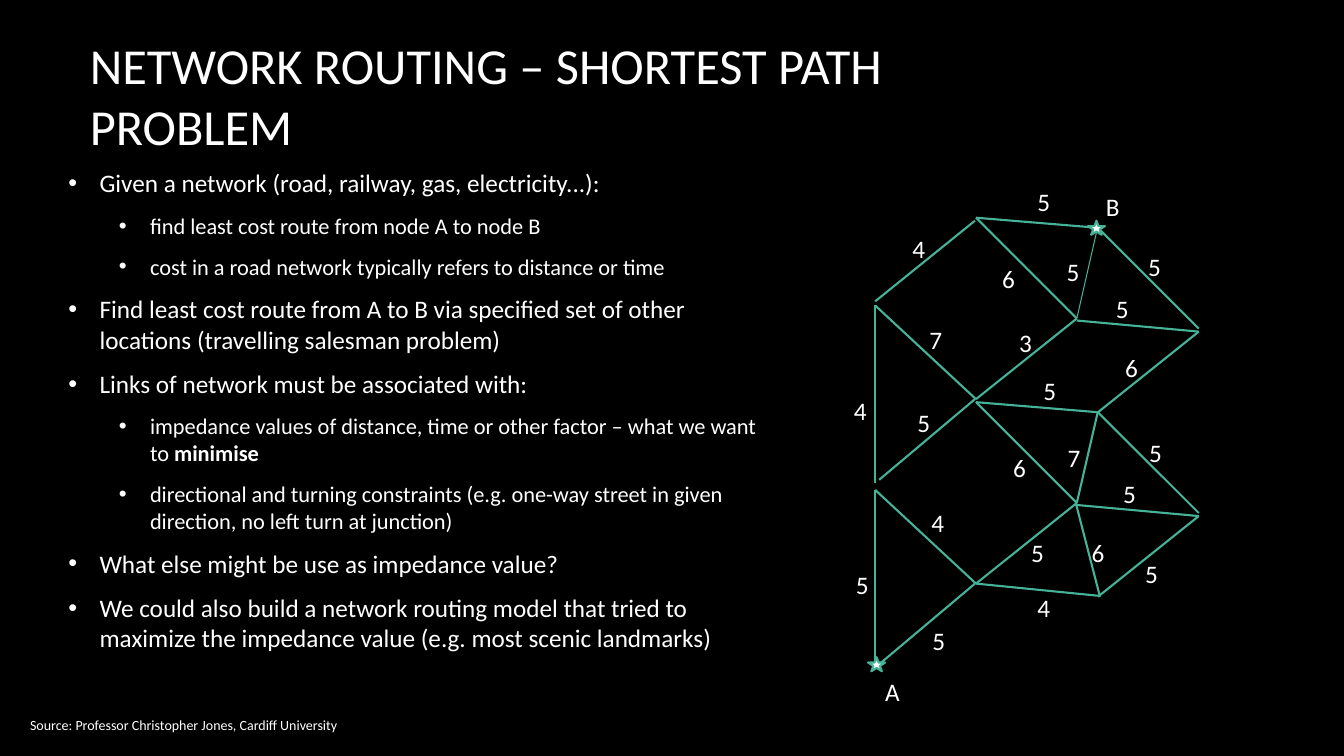
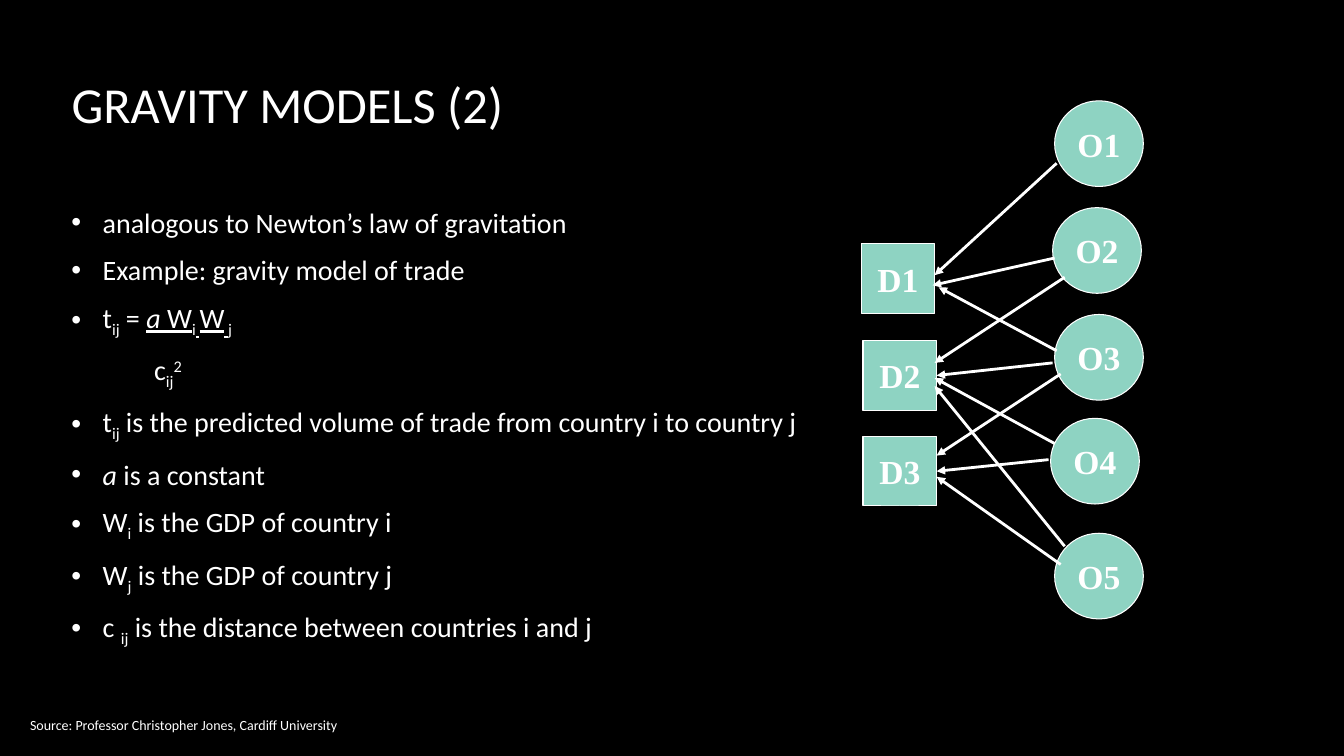
import collections

import pptx
import pptx.dml.color
import pptx.enum.shapes
import pptx.enum.text
import pptx.oxml
import pptx.oxml.ns
import pptx.util

Inches = pptx.util.Inches
Pt = pptx.util.Pt
RGBColor = pptx.dml.color.RGBColor
Shape = pptx.enum.shapes.MSO_SHAPE
Align = pptx.enum.text.PP_ALIGN
Anchor = pptx.enum.text.MSO_ANCHOR
Fit = pptx.enum.text.MSO_AUTO_SIZE

BLACK = RGBColor(0x00, 0x00, 0x00)
WHITE = RGBColor(0xFF, 0xFF, 0xFF)
GREEN = RGBColor(0x46, 0xB2, 0x98)
MINT = RGBColor(0x8E, 0xD3, 0xC2)
SANS = "Calibri"
SERIF = "Times New Roman"
SOURCE = "Source: Professor Christopher Jones, Cardiff University"

Style = collections.namedtuple("Style", "size left hang")
POINT = Style(18, 0.31, 0.31)
MINOR = Style(16, 0.81, 0.31)
LARGE = Style(20, 0.31, 0.31)
UNDER = Style(20, 0.82, 0)

ROUTING = [
    (POINT, "Given a network (road, railway, gas, electricity...):"),
    (MINOR, "find least cost route from node A to node B"),
    (MINOR, "cost in a road network typically refers to distance or time"),
    (POINT, "Find least cost route from A to B via specified set of other "
            "locations (travelling salesman problem)"),
    (POINT, "Links of network must be associated with:"),
    (MINOR, "impedance values of distance, time or other factor – what we want to ",
     ("minimise", "b")),
    (MINOR, "directional and turning constraints (e.g. one-way street in given "
            "direction, no left turn at junction)"),
    (POINT, "What else might be use as impedance value?"),
    (POINT, "We could also build a network routing model that tried to "
            "maximize the impedance value (e.g. most scenic landmarks)"),
]

GRAVITY = [
    (LARGE, "analogous to Newton’s law of gravitation"),
    (LARGE, "Example: gravity model of trade"),
    (LARGE, "t", ("ij", "-"), " = ", ("a", "iu"), (" W", "u"), ("i", "-"),
     (" ", "u-"), ("W", "u"), (" ", "u-"), ("j", "-")),
    (UNDER, "c", ("ij", "-"), ("2", "+")),
    (LARGE, "t", ("ij", "-"),
     " is the predicted volume of trade from country i to country j"),
    (LARGE, ("a", "i"), " is a constant"),
    (LARGE, "W", ("i", "-"), " is the GDP of country i"),
    (LARGE, "W", ("j", "-"), " is the GDP of country j"),
    (LARGE, "c ", ("ij", "-"), " is the distance between countries i and j"),
]

STEP = 1.83
TILE = [
    (9.68, 2.16, 10.89, 2.26), (10.89, 2.26, 11.89, 3.26),
    (9.68, 2.16, 10.68, 3.16), (9.68, 3.96, 10.68, 3.16),
    (10.89, 4.09, 11.89, 3.29), (10.68, 3.18, 11.89, 3.29),
    (8.72, 4.76, 9.67, 3.96), (8.68, 4.79, 8.68, 3.03),
    (9.68, 3.96, 8.68, 3.03),
]
EXTRA = [
    (8.68, 2.99, 9.67, 2.19), (10.68, 4.99, 10.89, 4.08),
    (10.67, 4.99, 10.91, 5.92), (9.68, 5.79, 10.89, 5.91),
]
COSTS = {
    "3": [(10.01, 3.2)],
    "4": [(10.19, 5.83), (8.37, 3.87), (9.14, 4.98), (8.95, 2.27)],
    "5": [(11.3, 4.29), (11.04, 4.7), (11.26, 5.49), (10.13, 5.28),
          (9.15, 6.15), (9, 3.99), (8.39, 5.6), (10.25, 3.67),
          (10.19, 1.8), (10.97, 2.86), (10.48, 2.49), (11.29, 2.44)],
    "6": [(9.95, 4.44), (10.73, 5.28), (11.06, 3.45), (9.84, 2.56)],
    "7": [(10.49, 4.34), (9.12, 3.17)],
}

DESTS = {"D1": (8.54, 2.42), "D2": (8.56, 3.38), "D3": (8.56, 4.33)}
ORIGINS = {"O1": (10.46, 1), "O2": (10.44, 2.06), "O3": (10.46, 3.12),
           "O4": (10.42, 4.15), "O5": (10.46, 5.29)}
FLOWS = [
    (10.48, 1.62, 9.27, 2.73), (10.46, 2.56, 9.25, 2.83),
    (10.48, 3.48, 9.31, 2.85), (10.46, 4.4, 9.27, 3.75),
    (10.52, 5.6, 9.29, 4.73), (10.56, 2.75, 9.27, 3.6),
    (10.52, 3.71, 9.29, 4.52), (10.56, 5.42, 9.27, 3.83),
]
JOINED = {"D2": (10.44, 3.6, 9.29, 3.72), "D3": (10.4, 4.56, 9.29, 4.68)}


def add_tag(parent, tag, **attrs):
    """Append a drawing element with the given attributes."""
    node = pptx.oxml.parse_xml(f"<a:{tag} {pptx.oxml.ns.nsdecls('a')}/>")
    for key, value in attrs.items():
        node.set(key, value)
    parent.append(node)
    return node


def set_font(para, size, name=SANS, bold=None):
    """Give a paragraph its white font."""
    para.font.size = Pt(size)
    para.font.name = name
    para.font.bold = bold
    para.font.color.rgb = WHITE


def add_title(slide, text, box):
    """Place and format the title placeholder."""
    title = slide.shapes.title
    title.left, title.top, title.width, title.height = map(Inches, box)
    frame = title.text_frame
    frame.text = text
    frame.word_wrap = True
    frame.auto_size = Fit.NONE
    frame.vertical_anchor = Anchor.MIDDLE
    para = frame.paragraphs[0]
    para.alignment = Align.LEFT
    set_font(para, 36)


def add_label(slide, text, left, top, width=0.33, height=0.4, size=18):
    """Add a short one-line label."""
    box = slide.shapes.add_textbox(*map(Inches, (left, top, width, height)))
    frame = box.text_frame
    frame.word_wrap = False
    frame.auto_size = Fit.SHAPE_TO_FIT_TEXT
    frame.text = text
    set_font(frame.paragraphs[0], size)


def add_run(para, text, marks=""):
    """Add a run; marks are b, i, u, - for subscript, + for superscript."""
    run = para.add_run()
    run.text = text
    if "b" in marks:
        run.font.bold = True
    if "i" in marks:
        run.font.italic = True
    if "u" in marks:
        run.font.underline = True
    for mark, shift in (("-", "-25000"), ("+", "30000")):
        if mark in marks:
            run._r.get_or_add_rPr().set("baseline", shift)


def add_body(slide, rows, box):
    """Add the list of points, centred vertically in its box."""
    frame = slide.shapes.add_textbox(*map(Inches, box)).text_frame
    frame.word_wrap = True
    frame.vertical_anchor = Anchor.MIDDLE
    for index, (style, *runs) in enumerate(rows):
        para = frame.add_paragraph() if index else frame.paragraphs[0]
        para.space_after = Pt(10)
        props = para._p.get_or_add_pPr()
        props.set("marL", str(Inches(style.left)))
        props.set("indent", str(-Inches(style.hang)))
        if style.hang:
            add_tag(add_tag(props, "buClr"), "srgbClr", val=str(WHITE))
            add_tag(props, "buFont", typeface="Arial")
            add_tag(props, "buChar", char="•")
        set_font(para, style.size)
        for run in runs:
            add_run(para, *([run] if isinstance(run, str) else run))


def add_line(slide, ends, color, width, arrow=False):
    """Draw a straight line, with an arrowhead at its end on request."""
    kind = pptx.enum.shapes.MSO_CONNECTOR.STRAIGHT
    line = slide.shapes.add_connector(kind, *map(Inches, ends))
    line.line.color.rgb = color
    line.line.width = Pt(width)
    if arrow:
        add_tag(line.line._get_or_add_ln(), "tailEnd", type="triangle")
    add_tag(line._element.spPr, "effectLst")
    return line


def add_form(slide, kind, box, fill, edge, width):
    """Add a filled and outlined preset shape."""
    form = slide.shapes.add_shape(kind, *map(Inches, box))
    form.shadow.inherit = False
    form.fill.solid()
    form.fill.fore_color.rgb = fill
    form.line.color.rgb = edge
    form.line.width = Pt(width)
    return form


def add_nodes(slide, kind, spots, size):
    """Add the labelled shapes of one kind and return them by name."""
    nodes = {}
    for name, spot in spots.items():
        node = add_form(slide, kind, (*spot, *size), MINT, WHITE, 0.75)
        frame = node.text_frame
        frame.word_wrap = False
        frame.vertical_anchor = Anchor.MIDDLE
        frame.text = name
        frame.paragraphs[0].alignment = Align.CENTER
        set_font(frame.paragraphs[0], 24, SERIF, True)
        nodes[name] = node
    return nodes


def add_slide(deck, title, place, rows, box):
    """Add a slide with its title, points and source line."""
    slide = deck.slides.add_slide(deck.slide_layouts[5])
    add_title(slide, title, place)
    add_body(slide, rows, box)
    add_label(slide, SOURCE, 0.2, 7.06, 3.3, 0.27, 10)
    return slide


def draw_roads(slide):
    """Draw the road network with its link costs and end nodes."""
    for drop in (0, STEP):
        for x1, y1, x2, y2 in TILE:
            add_line(slide, (x1, y1 + drop, x2, y2 + drop), GREEN, 1.5)
    for ends in EXTRA:
        add_line(slide, ends, GREEN, 1.5)
    add_line(slide, (10.68, 3.16, 10.89, 2.24), GREEN, 0.75)
    add_label(slide, "A", 8.68, 6.66, 0.35)
    add_label(slide, "B", 10.87, 1.85, 0.34)
    for spot in ((8.61, 6.52), (10.79, 2.19)):
        add_form(slide, Shape.STAR_5_POINT, (*spot, 0.17, 0.14), WHITE, GREEN, 1.5)
    for cost, spots in COSTS.items():
        for spot in spots:
            add_label(slide, cost, *spot)


def draw_flows(slide):
    """Draw the origins, the destinations and the flows between them."""
    dests = add_nodes(slide, Shape.RECTANGLE, DESTS, (0.73, 0.69))
    add_nodes(slide, Shape.OVAL, ORIGINS, (0.88, 0.85))
    for ends in FLOWS:
        add_line(slide, ends, WHITE, 2, True)
    for name, ends in JOINED.items():
        add_line(slide, ends, WHITE, 2, True).end_connect(dests[name], 3)


def main():
    """Build and save the deck."""
    deck = pptx.Presentation()
    deck.slide_width, deck.slide_height = Inches(13.33), Inches(7.5)
    back = deck.slide_master.background.fill
    back.solid()
    back.fore_color.rgb = BLACK
    draw_roads(add_slide(
        deck, "NETWORK ROUTING – SHORTEST PATH PROBLEM",
        (0.79, 0.49, 10.11, 0.9), ROUTING, (0.58, 1.65, 7.17, 4.84)))
    draw_flows(add_slide(
        deck, "GRAVITY MODELS (2)",
        (0.61, 0.65, 7.5, 0.75), GRAVITY, (0.61, 1.85, 8.62, 4.76)))
    deck.save("out.pptx")


if __name__ == "__main__":
    main()
